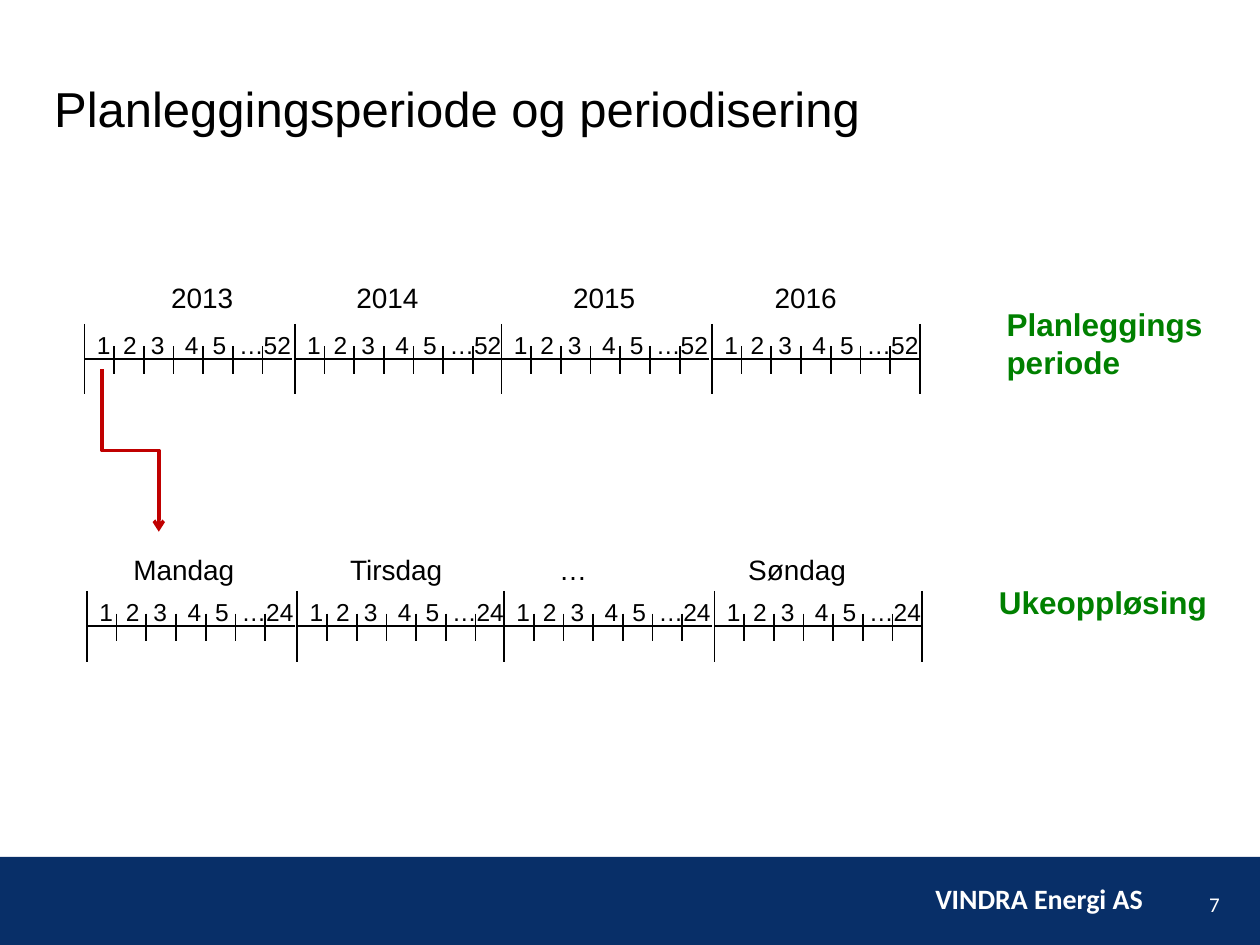
from lxml.etree import SubElement as Sub
from pptx import Presentation
from pptx.dml.color import RGBColor as Color
from pptx.enum.shapes import MSO_CONNECTOR as Link, MSO_SHAPE as Shape
from pptx.enum.text import MSO_ANCHOR as Anchor, PP_ALIGN as Align
from pptx.oxml.ns import qn
from pptx.util import Inches, Pt

BLACK = Color(0x00, 0x00, 0x00)
WHITE = Color(0xFF, 0xFF, 0xFF)
NAVY = Color(0x08, 0x2F, 0x68)
RED = Color(0xC0, 0x00, 0x00)
GREEN = Color(0x00, 0x80, 0x00)

STARTS = (0, 1.67, 3.31, 4.98)
END = 6.63
TICKS = 7
STEP = 1.65 / TICKS
TALL = 0.56
STOPS = (0.21, 0.43, 0.7, 0.92, 1.13)


def style(par, size, color=BLACK, bold=False, face="Arial"):
    """Format every run of a paragraph."""
    for run in par.runs:
        font = run.font
        font.size, font.bold, font.name = Pt(size), bold, face
        font.color.rgb = color


def label(slide, box, text, size, stops=(), align=Align.LEFT, **look):
    """Place a text box, with tab stops in inches if given."""
    frame = slide.shapes.add_textbox(*map(Inches, box)).text_frame
    frame.word_wrap = True
    par = frame.paragraphs[0]
    par.text = text
    par.alignment = align
    if stops:
        tabs = Sub(par._p.get_or_add_pPr(), qn("a:tabLst"))
        for stop in stops:
            Sub(tabs, qn("a:tab"), pos=str(Inches(stop)), algn="l")
    style(par, size, **look)
    return frame


def line(slide, x1, y1, x2, y2, color=BLACK, width=1, kind=Link.STRAIGHT):
    """Draw a connector without a shadow."""
    link = slide.shapes.add_connector(kind, *map(Inches, (x1, y1, x2, y2)))
    link.line.color.rgb = color
    link.line.width = Pt(width)
    Sub(link._element.spPr, qn("a:effectLst"))
    return link


def section(slide, left, top, last):
    """Draw one numbered stretch of a time axis."""
    mid = top + TALL / 2
    line(slide, left, top, left, top + TALL)
    for i in range(TICKS):
        x = left + i * STEP
        line(slide, x, mid, x + STEP, mid)
        if i:
            line(slide, x, mid - 0.1, x, mid + 0.12)
    label(slide, (left, top, 1.77, 0.34), f"1\t2\t3\t4\t5\t…{last}", 14, STOPS)


def axis(slide, left, top, last):
    """Draw a whole time axis with its end mark."""
    for start in STARTS:
        section(slide, left + start, top, last)
    line(slide, left + END, top, left + END, top + TALL)


def arrow(slide, left, top, width, height):
    """Draw the bent arrow that goes down, right and down in its box."""
    x, y = left + width / 2, top + height / 2
    link = line(slide, x + height / 2, y - width / 2, x - height / 2,
                y + width / 2, RED, 2, Link.ELBOW)
    link._element.spPr.find(qn("a:xfrm")).set("rot", "16200000")
    Sub(link.line._get_or_add_ln(), qn("a:tailEnd"), type="arrow")


def footer(slide, left, top, width, height):
    """Draw the footer band with sender and page number."""
    band = slide.shapes.add_shape(
        Shape.RECTANGLE, *map(Inches, (left, top, width, height)))
    band.shadow.inherit = False
    band.fill.solid()
    band.fill.fore_color.rgb = NAVY
    band.line.fill.background()
    look = dict(align=Align.RIGHT, color=WHITE, face="Calibri")
    label(slide, (left + 4.84, top + 0.15, 4.33, 0.37), "VINDRA Energi AS",
          16, bold=True, **look)
    page = label(slide, (left + 9.22, top + 0.22, 0.56, 0.31), "7", 12, **look)
    page.vertical_anchor = Anchor.MIDDLE


def heading(slide, *box):
    """Move and format the title."""
    title = slide.shapes.title
    title.left, title.top, title.width, title.height = map(Inches, box)
    frame = title.text_frame
    frame.text = "Planleggingsperiode og periodisering"
    frame.vertical_anchor = Anchor.TOP
    frame.margin_left, frame.margin_top = 0, Inches(0.1)
    frame.paragraphs[0].alignment = Align.LEFT
    style(frame.paragraphs[0], 28)


def main():
    """Build and save the slide."""
    deck = Presentation()
    deck.slide_width, deck.slide_height = Inches(10), Inches(7.5)
    slide = deck.slides.add_slide(deck.slide_layouts[5])
    footer(slide, 0, 6.8, 10, 0.7)
    heading(slide, 0.43, 0.52, 9.22, 0.7)

    axis(slide, 0.67, 2.57, 52)
    label(slide, (1.26, 2.18, 6.34, 0.37), "2013\t2014\t2015\t2016", 16,
          (1.47, 3.19, 4.79))
    label(slide, (7.89, 2.37, 1.81, 0.71), "Planleggingsperiode", 18,
          color=GREEN, bold=True)

    arrow(slide, 0.81, 2.93, 0.45, 1.29)

    axis(slide, 0.69, 4.69, 24)
    label(slide, (0.96, 4.34, 6.22, 0.37), "Mandag\tTirsdag\t…\tSøndag", 16,
          (1.72, 3.38, 4.88))
    label(slide, (7.83, 4.58, 1.97, 0.4), "Ukeoppløsing", 18,
          color=GREEN, bold=True)
    deck.save("out.pptx")


if __name__ == "__main__":
    main()
